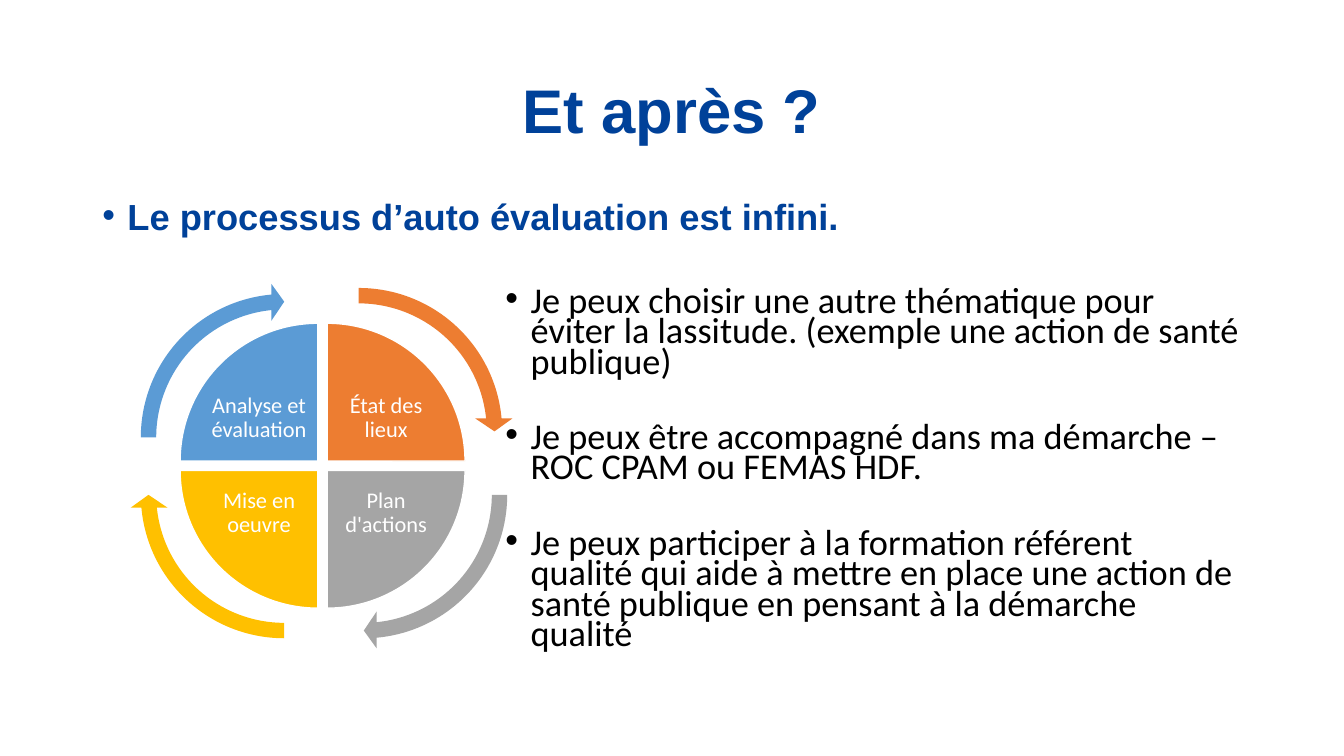
from lxml.etree import SubElement
from pptx import Presentation
from pptx.dml.color import RGBColor
from pptx.enum.shapes import MSO_SHAPE
from pptx.enum.text import MSO_ANCHOR, PP_ALIGN
from pptx.oxml.ns import qn
from pptx.util import Inches, Pt

CELL = Inches(40 / 3) / 40
COLS, ROWS = 40, 22.5
NAVY, BLACK, WHITE = "004199", "000000", "FFFFFF"

HUB = (9.6, 13.86)
PIE, ARROW = 8.2, 9.18
GAP = 0.14
LABEL_SIZE = (3.03, 2.25)
LABEL_OFFSET = (1.89, 1.41)
QUARTER = 54
SWEEP = 50.73

# label, colour, start angle, side of the hub (x, y), arrow offset (x, y)
STEPS = [
    ("État des lieux", "ED7D31", 162, (1, -1), (1.08, -1.02)),
    ("Plan d'actions", "A5A5A5", 0, (1, 1), (1.23, 0.87)),
    ("Mise en oeuvre", "FFC000", 54, (-1, 1), (-1.14, 0.87)),
    ("Analyse et évaluation", "5B9BD5", 108, (-1, -1), (-1.14, -0.84)),
]
HEADING = "Le processus d’auto évaluation est infini."
ADVICE = [
    "Je peux choisir une autre thématique pour éviter la lassitude. "
    "(exemple une action de santé publique)",
    "Je peux être accompagné dans ma démarche – ROC CPAM ou FEMAS HDF.",
    "Je peux participer à la formation référent qualité qui aide à mettre en "
    "place une action de santé publique en pensant à la démarche qualité",
]


def rgb(code):
    return RGBColor.from_string(code)


def grid(*cells):
    return [round(n * CELL) for n in cells]


def around_hub(dx, dy, width, height):
    """Box whose centre lies dx, dy cells away from the hub."""
    return grid(HUB[0] + dx - width / 2, HUB[1] + dy - height / 2, width, height)


def set_all(target, values):
    for name, value in values.items():
        setattr(target, name, value)


def write(p, text, color, font, **paragraph):
    r = p.add_run()
    r.text = text
    set_all(r.font, font)
    r.font.color.rgb = rgb(color)
    set_all(p, paragraph)


def add_bullet(p, indent):
    pPr = p._p.get_or_add_pPr()
    pPr.set("marL", str(Inches(indent)))
    pPr.set("indent", str(Inches(-0.25)))
    SubElement(pPr, qn("a:buFont"), typeface="Arial")
    SubElement(pPr, qn("a:buChar"), char="•")


def add_title(s, text):
    title = s.shapes.title
    set_all(title, dict(zip(("left", "top", "width", "height"),
                            grid(2.75, 1.2, 34.5, 4.35))))
    title.text_frame.vertical_anchor = MSO_ANCHOR.MIDDLE
    write(title.text_frame.paragraphs[0], text, NAVY,
          {"name": "Arial", "size": Pt(44), "bold": True},
          alignment=PP_ALIGN.CENTER, line_spacing=0.9)


def add_body(s):
    tf = s.shapes.add_textbox(*grid(2.75, 6, 34.5, 14.28)).text_frame
    tf.word_wrap = True
    p = tf.paragraphs[0]
    write(p, HEADING, NAVY, {"name": "Arial", "size": Pt(25.9), "bold": True},
          line_spacing=0.7, space_before=Pt(10))
    add_bullet(p, 0.25)
    for i, text in enumerate(ADVICE):
        p = tf.add_paragraph()
        write(p, text, BLACK, {"name": "Calibri", "size": Pt(25.9)},
              line_spacing=0.7, space_before=Pt(32 if i else 37))
        add_bullet(p, 4.25)


def add_preset(s, kind, box, color, adjustments):
    sp = s.shapes.add_shape(kind, *box)
    sp.shadow.inherit = False
    sp.fill.solid()
    sp.fill.fore_color.rgb = rgb(color)
    sp.line.fill.background()
    for i, value in enumerate(adjustments):
        sp.adjustments[i] = value
    return sp


def add_quarter(s, color, start, side):
    sp = add_preset(s, MSO_SHAPE.PIE,
                    around_hub(side[0] * GAP, side[1] * GAP, PIE, PIE),
                    color, (start, (start + QUARTER) % (4 * QUARTER)))
    sp.line.color.rgb = rgb(WHITE)
    sp.line.width = Pt(1)


def add_label(s, text, side):
    dx, dy = (sign * off for sign, off in zip(side, LABEL_OFFSET))
    tf = s.shapes.add_textbox(*around_hub(dx, dy, *LABEL_SIZE)).text_frame
    set_all(tf, {"word_wrap": True, "vertical_anchor": MSO_ANCHOR.MIDDLE})
    set_all(tf, {f"margin_{edge}": Inches(0.02)
                 for edge in ("left", "right", "top", "bottom")})
    write(tf.paragraphs[0], text, WHITE, {"name": "Calibri", "size": Pt(16)},
          alignment=PP_ALIGN.CENTER, line_spacing=0.9)


def add_cycle(s):
    for text, color, start, side, _ in STEPS:
        add_quarter(s, color, start, side)
        add_label(s, text, side)
    for _, color, start, _, offset in STEPS:
        add_preset(s, MSO_SHAPE.CIRCULAR_ARROW,
                   around_hub(*offset, ARROW, ARROW), color,
                   (0.05, 3.28, start + SWEEP, start, 0.06))


def main():
    prs = Presentation()
    prs.slide_width, prs.slide_height = grid(COLS, ROWS)
    s = prs.slides.add_slide(prs.slide_layouts[5])
    add_title(s, "Et après ?")
    add_body(s)
    add_cycle(s)
    prs.save("out.pptx")


if __name__ == "__main__":
    main()
